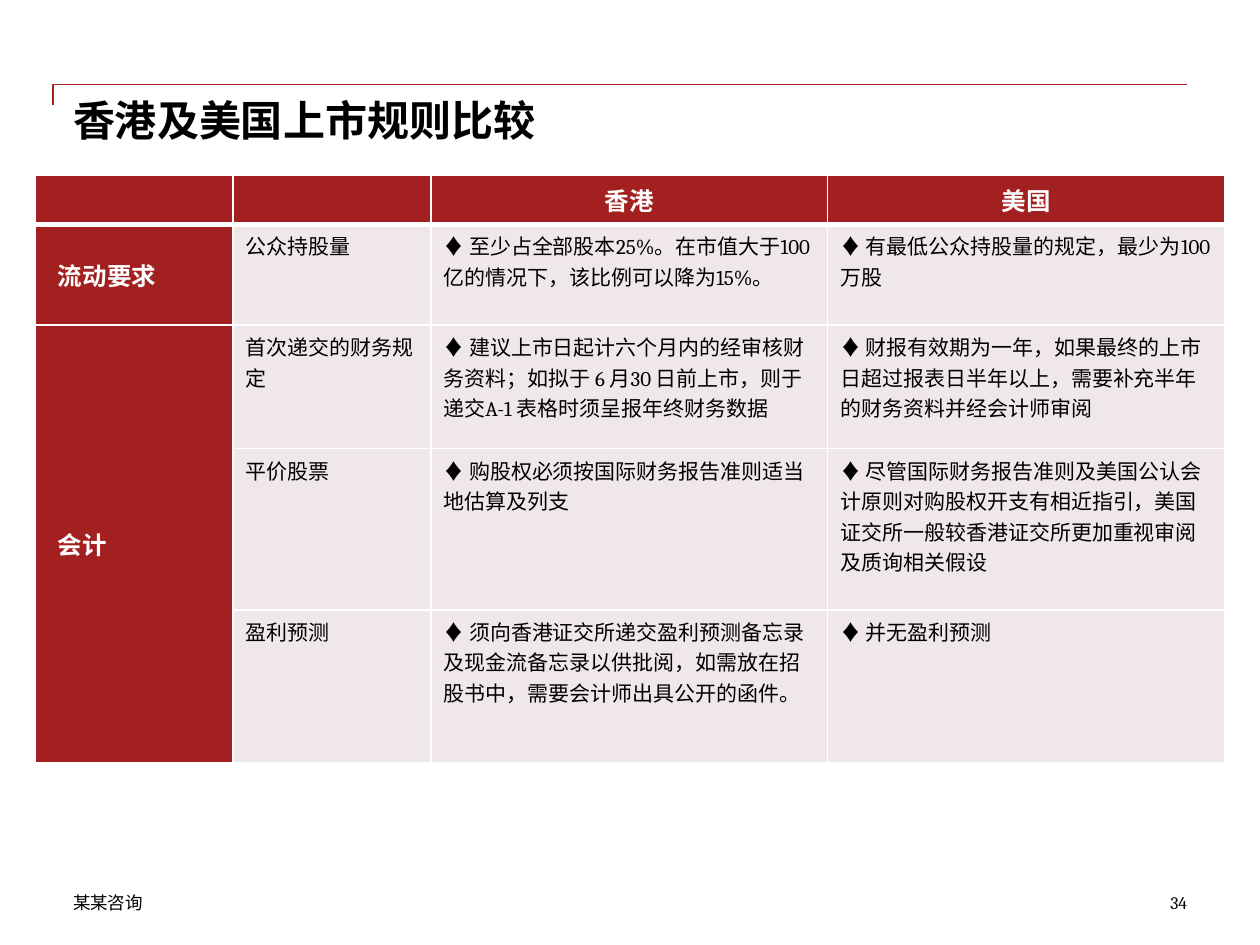
from dataclasses import dataclass
from lxml import etree
from pptx import Presentation
from pptx import util as u
from pptx.dml.color import RGBColor
from pptx.enum import text
from pptx.oxml import ns

RED = RGBColor(0xA3, 0x20, 0x20)
PALE = RGBColor(0xF0, 0xE8, 0xE8)
WHITE = RGBColor(0xFF, 0xFF, 0xFF)
BLACK = RGBColor(0, 0, 0)
SERIF = "Cambria"
SANS = "Noto Sans CJK SC"
LEFT, MID, RIGHT = text.PP_ALIGN.LEFT, text.PP_ALIGN.CENTER, text.PP_ALIGN.RIGHT


@dataclass
class Style:
    size: float
    color: RGBColor = BLACK
    bold: bool = False
    face: str = SERIF
    align: text.PP_ALIGN = LEFT


@dataclass
class Label:
    words: str
    box: tuple
    style: Style


HEAD = Style(14, WHITE, True, align=MID)
GROUP = Style(14, WHITE, True)
BODY = Style(12)

LABELS = [
    Label("某某咨询", (0.58, 7.08, 2.83, 0.17), Style(10, face=SANS)),
    Label("香港及美国上市规则比较", (0.58, 0.75, 8.83, 1), Style(24, bold=True)),
    Label("34", (7.75, 7.08, 1.67, 0.17), Style(10, align=RIGHT)),
]

COLS = [1.57, 1.57, 3.15, 3.15]
ROWS = [0.39, 0.8, 0.98, 1.28, 1.21]
CELLS = [
    ["", "", "香港", "美国"],
    ["流动要求", "公众持股量",
     "♦ 至少占全部股本25%。在市值大于100亿的情况下，该比例可以降为15%。",
     "♦ 有最低公众持股量的规定，最少为100万股"],
    ["会计", "首次递交的财务规定",
     "♦ 建议上市日起计六个月内的经审核财务资料；如拟于 6 月30 日前上市，"
     "则于递交A-1 表格时须呈报年终财务数据",
     "♦ 财报有效期为一年，如果最终的上市日超过报表日半年以上，"
     "需要补充半年的财务资料并经会计师审阅"],
    ["", "平价股票",
     "♦ 购股权必须按国际财务报告准则适当地估算及列支",
     "♦ 尽管国际财务报告准则及美国公认会计原则对购股权开支有相近指引，"
     "美国证交所一般较香港证交所更加重视审阅及质询相关假设"],
    ["", "盈利预测",
     "♦ 须向香港证交所递交盈利预测备忘录及现金流备忘录以供批阅，"
     "如需放在招股书中，需要会计师出具公开的函件。",
     "♦ 并无盈利预测"],
]


def write(frame, words: str, style: Style) -> None:
    para = frame.paragraphs[0]
    para.text = words
    para.alignment = style.align
    font = para.font
    font.size, font.bold, font.name = u.Pt(style.size), style.bold, style.face
    font.color.rgb = style.color


def add_label(slide, label: Label) -> None:
    box = slide.shapes.add_textbox(*map(u.Inches, label.box))
    frame = box.text_frame
    frame.word_wrap = True
    frame.margin_left = frame.margin_right = 0
    frame.margin_top = frame.margin_bottom = 0
    write(frame, label.words, label.style)


def add_rule(slide) -> None:
    pen = slide.shapes.build_freeform(u.Inches(0.42), u.Inches(0.83))
    corner = [(u.Inches(0.42), u.Inches(0.67)), (u.Inches(9.42), u.Inches(0.67))]
    pen.add_line_segments(corner, close=False)
    rule = pen.convert_to_shape()
    rule.shadow.inherit = False
    rule.fill.background()
    rule.line.color.rgb = RED
    rule.line.width = u.Pt(1)


def set_edge(cell, side: str, width: float) -> None:
    props = cell._tc.get_or_add_tcPr()
    edge = etree.SubElement(props, ns.qn(f"a:ln{side}"), w=str(u.Pt(width)))
    fill = etree.SubElement(edge, ns.qn("a:solidFill"))
    etree.SubElement(fill, ns.qn("a:srgbClr"), val=str(WHITE))


def fill_cell(cell, row: int, col: int) -> None:
    # Borders come before the fill in the cell properties
    for side in "LRTB":
        thick = (row == 0 and side == "B") or (row == 1 and side == "T")
        set_edge(cell, side, 3 if thick else 1)
    cell.fill.solid()
    cell.fill.fore_color.rgb = RED if row == 0 or col == 0 else PALE
    style = HEAD if row == 0 else GROUP if col == 0 else BODY
    if style is GROUP:
        cell.margin_left = u.Inches(0.18)
    if style is not BODY:
        cell.vertical_anchor = text.MSO_ANCHOR.MIDDLE
    write(cell.text_frame, CELLS[row][col], style)


def add_grid(slide) -> None:
    area = map(u.Inches, (0.28, 1.39, sum(COLS), sum(ROWS)))
    grid = slide.shapes.add_table(len(ROWS), len(COLS), *area).table
    grid.first_row = grid.horz_banding = False
    for col, width in enumerate(COLS):
        grid.columns[col].width = u.Inches(width)
    for row, height in enumerate(ROWS):
        grid.rows[row].height = u.Inches(height)
        for col in range(len(COLS)):
            fill_cell(grid.cell(row, col), row, col)
    grid.cell(2, 0).merge(grid.cell(4, 0))


def main() -> None:
    deck = Presentation()
    deck.slide_width, deck.slide_height = u.Inches(10), u.Inches(7.5)
    slide = deck.slides.add_slide(deck.slide_layouts[6])

    # Frame: corner rule, title, footer and page number
    add_rule(slide)
    for label in LABELS:
        add_label(slide, label)

    # Comparison table
    add_grid(slide)
    deck.save("out.pptx")


if __name__ == "__main__":
    main()
